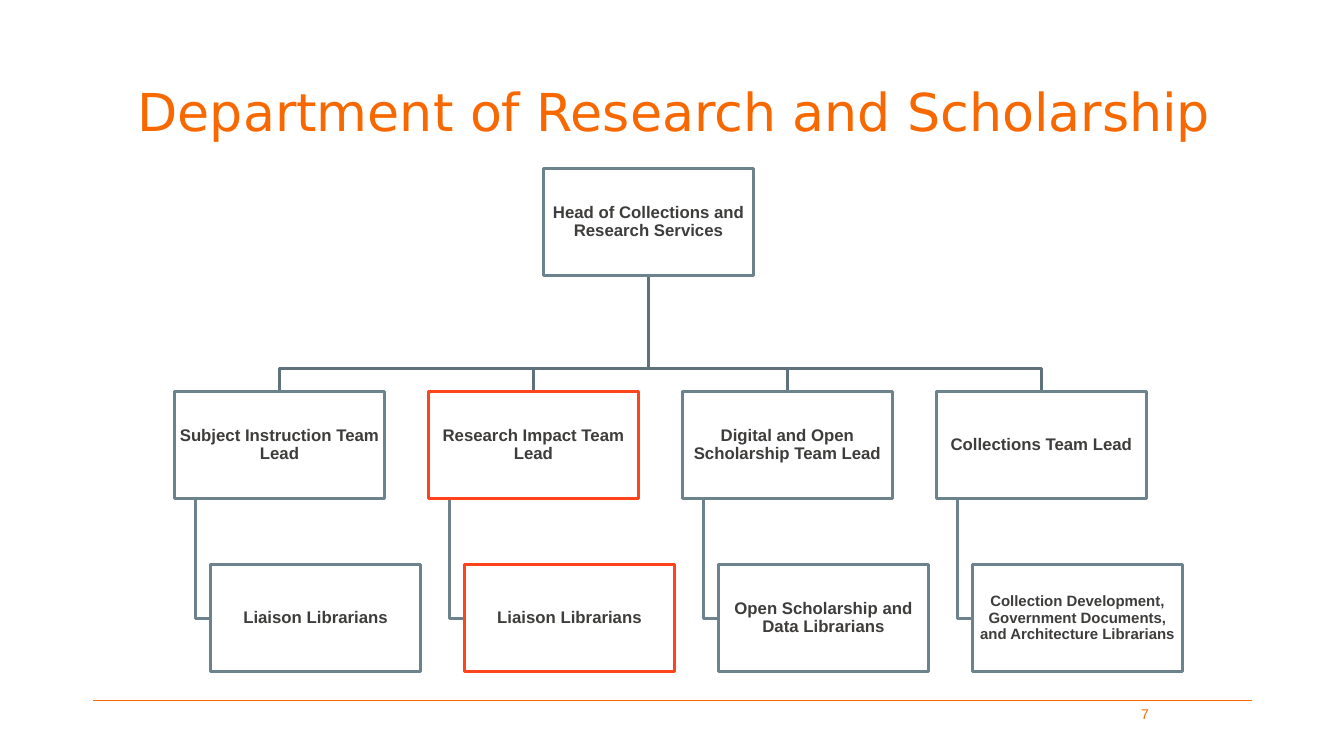
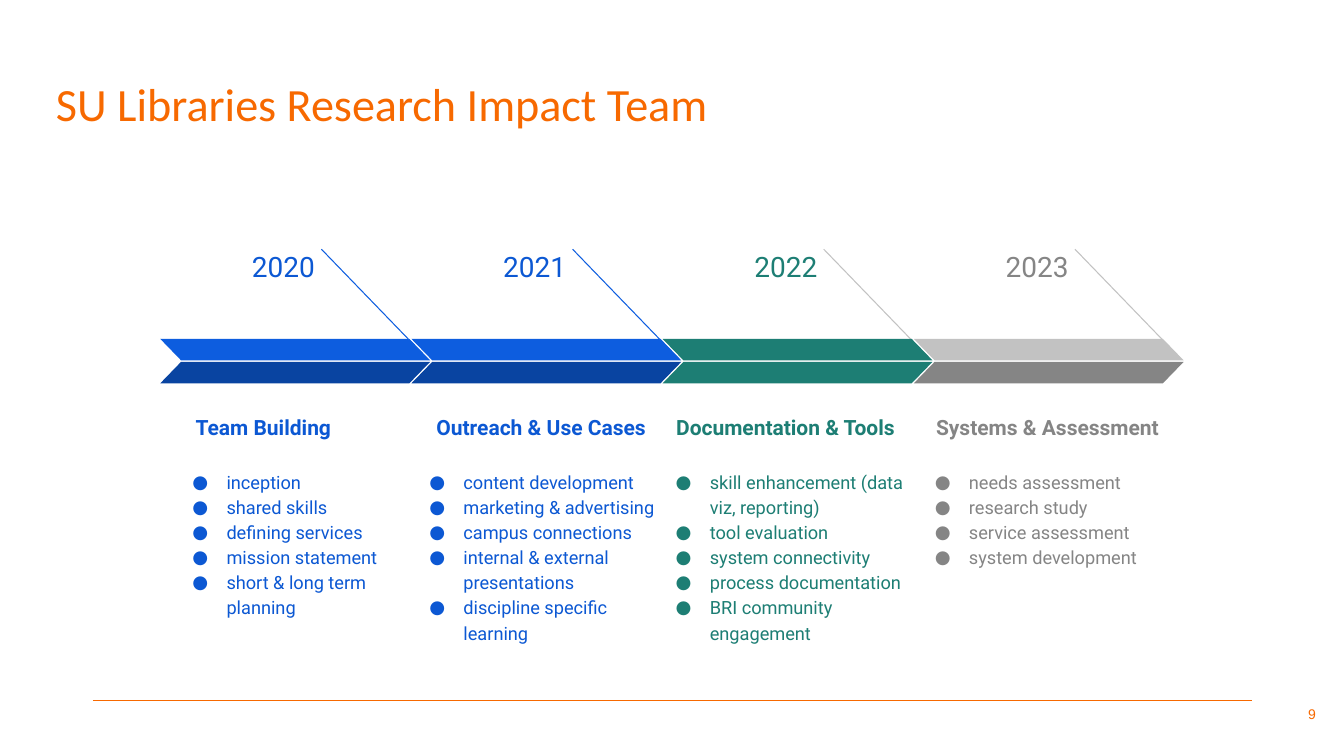
from dataclasses import dataclass
from typing import NamedTuple

from lxml.etree import SubElement
from pptx import Presentation
from pptx.dml.color import RGBColor
from pptx.enum.shapes import MSO_CONNECTOR as Connector, MSO_SHAPE as Preset
from pptx.enum.text import MSO_ANCHOR as Anchor, PP_ALIGN as Align
from pptx.oxml.ns import qn
from pptx.util import Cm, Pt


@dataclass(frozen=True)
class Theme:
    """Colours (RRGGBB), fonts and type sizes (points)."""
    orange: str = "F76900"
    white: str = "FFFFFF"
    ink: str = "3E3D3C"
    slate: str = "6C828C"
    dark_slate: str = "5F727B"
    red: str = "FF431B"
    blue: str = "0C58D3"
    bright_blue: str = "0D5DDF"
    navy: str = "0944A1"
    teal: str = "1D7E74"
    grey: str = "858585"
    light_grey: str = "C2C2C2"
    body_font: str = "Arial"
    timeline_font: str = "Roboto"
    number_size: float = 10
    box_size: float = 12
    small_box_size: float = 10.7
    year_size: float = 20
    heading_size: float = 15
    list_size: float = 13
    thin_line: float = 0.75
    chart_line: float = 2


THEME = Theme()


class Box(NamedTuple):
    """Left, top, width and height in centimetres."""
    left: float
    top: float
    width: float
    height: float

    def lengths(self):
        return [Cm(value) for value in self]


class Style(NamedTuple):
    font: str
    size: float
    color: str
    bold: bool = False
    align: Align = Align.LEFT
    anchor: Anchor = Anchor.TOP
    spacing: float = 1.0
    inset: float = 0.33
    bullet: str = ""


class Team(NamedTuple):
    lead: str
    staff: str
    border: str = THEME.slate
    staff_size: float = THEME.box_size


class Phase(NamedTuple):
    year: str
    heading: str
    heading_left: float
    items: list[str]
    list_left: float
    text: str
    upper: str
    lower: str
    pointer: str


TEAMS = [
    Team("Subject Instruction Team Lead", "Liaison Librarians"),
    Team("Research Impact Team Lead", "Liaison Librarians", THEME.red),
    Team("Digital and Open Scholarship Team Lead", "Open Scholarship and Data Librarians"),
    Team("Collections Team Lead",
         "Collection Development, Government Documents, and Architecture Librarians",
         staff_size=THEME.small_box_size),
]

PHASES = [
    Phase("2020", "Team Building", 4.6,
          ["inception", "shared skills", "defining services", "mission statement",
           "short & long term planning"], 4.11,
          THEME.blue, THEME.bright_blue, THEME.navy, THEME.bright_blue),
    Phase("2021", "Outreach & Use Cases", 10.67,
          ["content development", "marketing & advertising", "campus connections",
           "internal & external presentations", "discipline specific learning"], 10.08,
          THEME.blue, THEME.bright_blue, THEME.navy, THEME.bright_blue),
    Phase("2022", "Documentation & Tools", 16.71,
          ["skill enhancement (data viz, reporting)", "tool evaluation",
           "system connectivity", "process documentation", "BRI community engagement"], 16.29,
          THEME.teal, THEME.teal, THEME.teal, THEME.light_grey),
    Phase("2023", "Systems & Assessment", 23.26,
          ["needs assessment", "research study", "service assessment",
           "system development"], 22.82,
          THEME.grey, THEME.light_grey, THEME.grey, THEME.light_grey),
]


# Drawing helpers
def rgb(color: str) -> RGBColor:
    return RGBColor.from_string(color)


def add_bullet(paragraph, style: Style) -> None:
    properties = paragraph._p.get_or_add_pPr()
    properties.set("marL", str(Cm(1.27)))
    properties.set("indent", str(Cm(-0.86)))
    bullet_color = SubElement(properties, qn("a:buClr"))
    SubElement(bullet_color, qn("a:srgbClr"), val=style.color)
    SubElement(properties, qn("a:buSzPts"), val=str(int(style.size * 100)))
    SubElement(properties, qn("a:buFont"), typeface=style.font)
    SubElement(properties, qn("a:buChar"), char=style.bullet)


def write(shape, lines: list[str], style: Style) -> None:
    frame = shape.text_frame
    frame.word_wrap = True
    frame.vertical_anchor = style.anchor
    frame.margin_left = frame.margin_right = Cm(style.inset)
    frame.margin_top = frame.margin_bottom = Cm(style.inset)
    for index, line in enumerate(lines):
        paragraph = frame.add_paragraph() if index else frame.paragraphs[0]
        paragraph.text = line
        if style.bullet:
            add_bullet(paragraph, style)
        paragraph.alignment = style.align
        paragraph.line_spacing = style.spacing
        font = paragraph.font
        font.name, font.size, font.bold = style.font, Pt(style.size), style.bold
        font.color.rgb = rgb(style.color)


def add_text(slide, box: Box, lines: list[str], style: Style) -> None:
    write(slide.shapes.add_textbox(*box.lengths()), lines, style)


def add_preset(slide, preset: Preset, box: Box, fill: str, border: str = ""):
    shape = slide.shapes.add_shape(preset, *box.lengths())
    shape.shadow.inherit = False
    shape.fill.solid()
    shape.fill.fore_color.rgb = rgb(fill)
    if border:
        shape.line.color.rgb = rgb(border)
        shape.line.width = Pt(THEME.chart_line)
    else:
        shape.line.fill.background()
    return shape


def add_line(slide, start: tuple[float, float], end: tuple[float, float], color: str) -> None:
    line = slide.shapes.add_connector(
        Connector.STRAIGHT, *(Cm(value) for value in (*start, *end)))
    line.line.color.rgb = rgb(color)
    line.line.width = Pt(THEME.thin_line)
    SubElement(line._element.spPr, qn("a:effectLst"))


def add_bent_line(slide, points: list[tuple[float, float]], color: str) -> None:
    start, *rest = [(Cm(x), Cm(y)) for x, y in points]
    builder = slide.shapes.build_freeform(*start)
    builder.add_line_segments(rest, close=False)
    shape = builder.convert_to_shape()
    shape.shadow.inherit = False
    shape.fill.background()
    shape.line.color.rgb = rgb(color)
    shape.line.width = Pt(THEME.chart_line)


# Shared frame: title, footer rule and slide number
def add_framed_slide(presentation, title: str, title_box: Box, title_style: Style,
                     number: str, number_box: Box):
    slide = presentation.slides.add_slide(presentation.slide_layouts[6])
    add_line(slide, (2.34, 17.65), (31.55, 17.65), THEME.orange)
    add_text(slide, title_box, [title], title_style)
    add_text(slide, number_box, [number],
             Style(THEME.body_font, THEME.number_size, THEME.orange, align=Align.RIGHT,
                   anchor=Anchor.MIDDLE, inset=title_style.inset))
    return slide


# Organisation chart
def add_org_box(slide, left: float, top: float, text: str, border: str = THEME.slate,
                size: float = THEME.box_size) -> None:
    shape = add_preset(slide, Preset.RECTANGLE, Box(left, top, 5.29, 2.7),
                       THEME.white, border)
    write(shape, [text], Style(THEME.body_font, size, THEME.ink, True, Align.CENTER,
                               Anchor.MIDDLE, 0.9, 0.03))


def build_department(presentation) -> None:
    slide = add_framed_slide(
        presentation, "Department of Research and Scholarship", Box(2.41, 1.67, 29.18, 2.13),
        Style("DejaVu Sans", 37.3, THEME.orange, align=Align.CENTER),
        "7", Box(27.76, 17.27, 1.52, 1.45))
    half_width, height = 2.64, 2.7
    head_left, head_top = 13.7, 4.25
    first_left, pitch, lead_top = 4.4, 6.4, 9.87
    staff_shift, staff_top, stem_shift = 0.91, 14.23, 0.53
    bus_top = 9.29
    head_center, staff_middle = head_left + half_width, staff_top + height / 2
    lefts = [first_left + index * pitch for index in range(len(TEAMS))]

    # Lines from the head to the leads and from the leads to their staff
    for left in lefts:
        center, stem = left + half_width, left + stem_shift
        add_bent_line(slide, [(head_center, head_top + height), (head_center, bus_top),
                              (center, bus_top), (center, lead_top)], THEME.dark_slate)
        add_bent_line(slide, [(stem, lead_top + height), (stem, staff_middle),
                              (left + staff_shift, staff_middle)], THEME.slate)

    # Boxes
    add_org_box(slide, head_left, head_top, "Head of Collections and Research Services")
    for left, team in zip(lefts, TEAMS):
        add_org_box(slide, left, lead_top, team.lead, team.border)
        add_org_box(slide, left + staff_shift, staff_top, team.staff,
                    team.border, team.staff_size)


# Timeline
def add_band(slide, left: float, top: float, color: str, flipped: bool) -> None:
    band = add_preset(slide, Preset.PARALLELOGRAM, Box(left, top, 6.8, 0.54), color)
    band.adjustments[0] = 0.97
    if flipped:
        band._element.spPr.find(qn("a:xfrm")).set("flipH", "1")


def add_phase(slide, phase: Phase, left: float) -> None:
    style = Style(THEME.timeline_font, THEME.year_size, phase.text, spacing=1.15)
    year = add_preset(slide, Preset.RECTANGLE, Box(left + 1.92, 5.84, 2.31, 0.89), THEME.white)
    write(year, [phase.year], style._replace(align=Align.RIGHT))
    add_text(slide, Box(phase.heading_left, 9.76, 6.96, 1.65), [phase.heading],
             style._replace(size=THEME.heading_size, bold=True, anchor=Anchor.BOTTOM))
    add_text(slide, Box(phase.list_left, 11.46, 6.96, 2.74), phase.items,
             style._replace(size=THEME.list_size, bullet="●"))
    add_line(slide, (left + 4.06, 6.28), (left + 6.71, 9.02), phase.pointer)
    add_band(slide, left, 8.54, phase.upper, True)
    add_band(slide, left, 9.12, phase.lower, False)


def build_timeline(presentation) -> None:
    slide = add_framed_slide(
        presentation, "SU Libraries Research Impact Team", Box(1.16, 1.65, 31.55, 2.11),
        Style("Calibri", 33, THEME.orange, inset=0.25),
        "9", Box(31.38, 17.27, 2.03, 1.45))
    for index, phase in enumerate(PHASES):
        add_phase(slide, phase, 4.04 + index * 6.33)


def main() -> None:
    presentation = Presentation()
    presentation.slide_width, presentation.slide_height = Cm(33.87), Cm(19.05)
    build_department(presentation)
    build_timeline(presentation)
    presentation.save("out.pptx")


if __name__ == "__main__":
    main()
